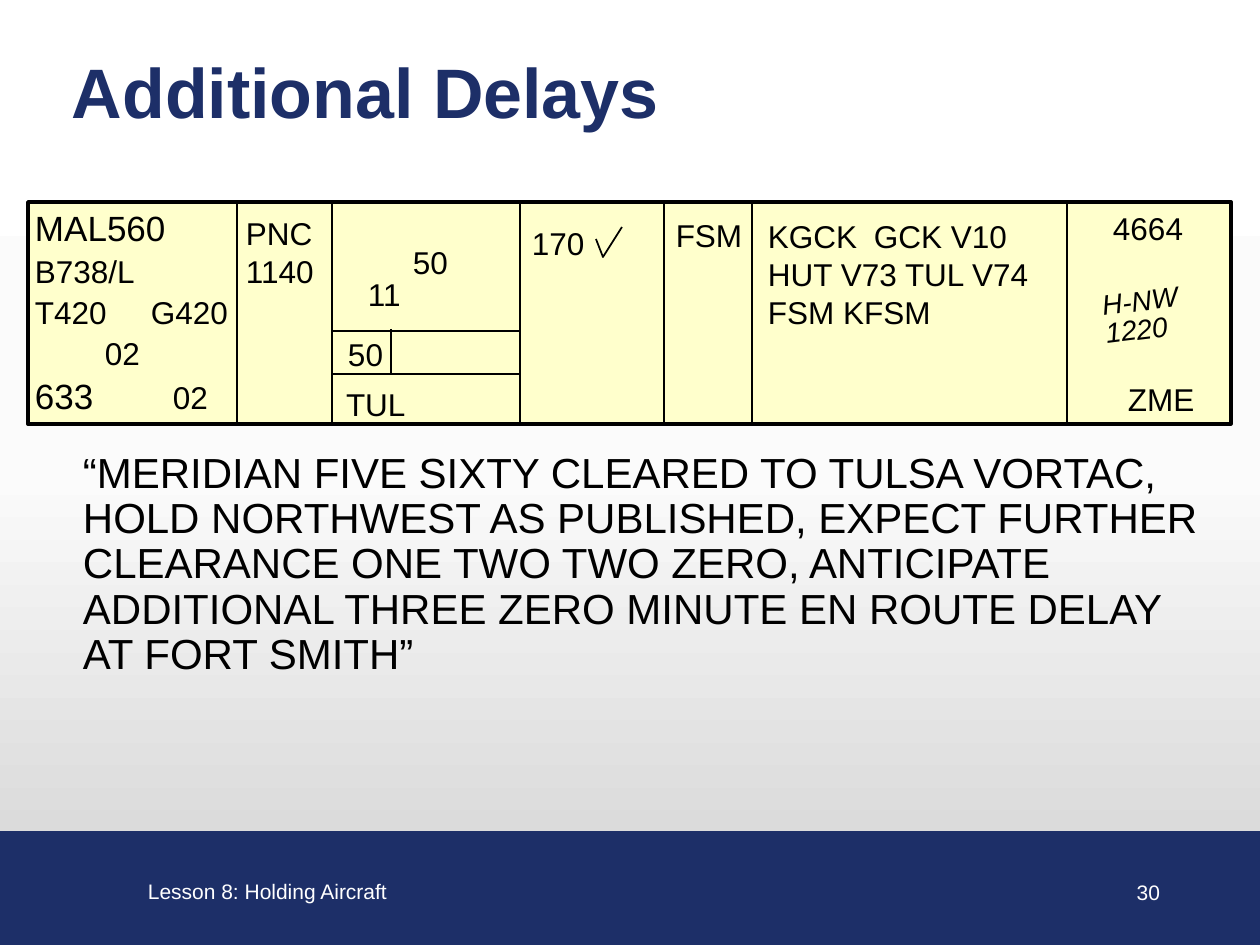
from copy import deepcopy

from lxml import etree
from pptx import Presentation
from pptx.dml.color import RGBColor
from pptx.enum.shapes import MSO_CONNECTOR, MSO_SHAPE
from pptx.enum.text import MSO_ANCHOR, PP_ALIGN
from pptx.oxml.ns import qn
from pptx.util import Emu, Pt

LEFT, CENTER, RIGHT = PP_ALIGN.LEFT, PP_ALIGN.CENTER, PP_ALIGN.RIGHT
TOP, MIDDLE = MSO_ANCHOR.TOP, MSO_ANCHOR.MIDDLE
STRAIGHT, RECTANGLE = MSO_CONNECTOR.STRAIGHT, MSO_SHAPE.RECTANGLE
EMU_PER_PX = 914400 / 126

NAVY, WHITE, BLACK, CREAM = "1D2F68", "FFFFFF", "000000", "FFFFCC"
BACKGROUND = [(0, WHITE), (0.5, "FBFBFB"), (1, "D0D0D0")]
PADDED = (13, 6)

TITLE = "Additional Delays"
CLEARANCE = (
    "“MERIDIAN FIVE SIXTY CLEARED TO TULSA VORTAC, HOLD NORTHWEST AS PUBLISHED, "
    "EXPECT FURTHER CLEARANCE ONE TWO TWO ZERO, ANTICIPATE ADDITIONAL THREE ZERO "
    "MINUTE EN ROUTE DELAY AT FORT SMITH”"
)

FOOTER_BAR = (0, 832, 1260, 113)
STRIP = (28, 202, 1203, 222)
COLUMN_TOP, COLUMN_BOTTOM = 204, 422
COLUMN_EDGES = [237, 332, 520, 664, 752, 1067]
CELL_LINES = [(333, 374, 519, 374), (333, 331, 519, 331), (391, 329, 391, 374)]
CHECK_MARK = [(596, 239), (603, 257), (622, 227)]

AIRCRAFT = [
    [("MAL560", 20)],
    [("B738/L", 18)],
    [("T420\tG420", 18)],
    [("\t02", 18)],
    [("633", 20), ("\t02", 18)],
]
AIRCRAFT_TABS = [[], [], [116], [70], [138]]

TEXTS = [
    ((135, 873, 280, 38), ["Lesson 8: Holding Aircraft"],
     dict(size=12, color=WHITE, inset=PADDED)),
    ((1095, 873, 78, 38), ["30"],
     dict(size=12, color=WHITE, inset=PADDED, align=RIGHT, anchor=MIDDLE)),
    ((35, 207, 202, 213), AIRCRAFT, dict(before=1.7, tabs=AIRCRAFT_TABS)),
    ((346, 385, 80, 39), ["TUL"], {}),
    ((768, 217, 290, 158), ["KGCK\tGCK V10", "HUT V73 TUL V74", "FSM KFSM"],
     dict(tabs=[[106], [], []])),
    ((413, 243, 60, 39), ["50"], {}),
    ((368, 275, 60, 39), ["11"], {}),
    ((233, 208, 101, 88), ["PNC", "1140"], dict(inset=PADDED)),
    ((532, 224, 74, 49), ["170"], {}),
    ((70, 446, 1145, 242), [CLEARANCE], dict(size=24, inset=PADDED, spacing=0.9)),
    ((1104, 287, 94, 60), ["H-NW", "1220"],
     dict(size=16, italic=True, spacing=0.85, rotation=353)),
    ((348, 335, 42, 39), ["50"], {}),
    ((648, 210, 122, 50), ["FSM"], dict(inset=(6, 6), align=CENTER)),
    ((1100, 203, 125, 50), ["4664"], dict(inset=PADDED)),
    ((1115, 374, 112, 50), ["ZME"], dict(inset=PADDED)),
]


def px(length):
    return Emu(round(length * EMU_PER_PX))


def rgb(value):
    return RGBColor.from_string(value)


def write(box, paragraphs, size=18, color=BLACK, bold=False, italic=False,
          align=LEFT, anchor=TOP, inset=(0, 0), spacing=1.0,
          before=0, tabs=None, rotation=0):
    box.rotation = rotation
    frame = box.text_frame
    frame.word_wrap, frame.vertical_anchor = True, anchor
    frame.margin_left = frame.margin_right = px(inset[0])
    frame.margin_top = frame.margin_bottom = px(inset[1])
    for index, content in enumerate(paragraphs):
        para = frame.add_paragraph() if index else frame.paragraphs[0]
        para.alignment, para.line_spacing = align, spacing
        para.space_before = Pt(before if index else 0)
        if tabs and tabs[index]:
            tab_list = etree.SubElement(para._p.get_or_add_pPr(), qn("a:tabLst"))
            for position in tabs[index]:
                etree.SubElement(tab_list, qn("a:tab"), pos=str(px(position)), algn="l")
        spans = [(content, size)] if isinstance(content, str) else content
        for text, points in spans:
            span = para.add_run()
            span.text = text
            span.font.name, span.font.size = "Arial", Pt(points)
            span.font.bold, span.font.italic = bold, italic
            span.font.color.rgb = rgb(color)


def add_text(page, place, paragraphs, **style):
    write(page.shapes.add_textbox(*map(px, place)), paragraphs, **style)


def add_rectangle(page, place, fill, line, width):
    shape = page.shapes.add_shape(RECTANGLE, *map(px, place))
    shape.shadow.inherit = False
    shape.fill.solid()
    shape.fill.fore_color.rgb = rgb(fill)
    shape.line.color.rgb = rgb(line)
    shape.line.width = Pt(width)


def add_line(page, ends):
    line = page.shapes.add_connector(STRAIGHT, *map(px, ends))
    line.line.color.rgb = rgb(BLACK)
    line.line.width = Pt(1)
    etree.SubElement(line._element.spPr, qn("a:effectLst"))


def add_check_mark(page, points):
    builder = page.shapes.build_freeform(*points[0], scale=EMU_PER_PX)
    builder.add_line_segments(points[1:], close=False)
    mark = builder.convert_to_shape()
    mark.shadow.inherit = False
    mark.fill.background()
    mark.line.color.rgb = rgb(BLACK)
    mark.line.width = Pt(1)


def paint_background(page, colors):
    fill = page.background.fill
    fill.gradient()
    fill.gradient_angle = 270
    first = fill.gradient_stops[0]._gs
    first.addnext(deepcopy(first))
    for stop, (position, color) in zip(fill.gradient_stops, colors):
        stop.position = position
        stop.color.rgb = rgb(color)


def main():
    deck = Presentation()
    deck.slide_width, deck.slide_height = px(1260), px(945)
    page = deck.slides.add_slide(deck.slide_layouts[5])
    paint_background(page, BACKGROUND)

    title = page.shapes.title
    title.left, title.top, title.width, title.height = map(px, (59, 48, 1168, 84))
    write(title, [TITLE], size=40, color=NAVY, bold=True, anchor=MIDDLE, inset=PADDED)

    add_rectangle(page, FOOTER_BAR, NAVY, NAVY, 0.75)
    add_rectangle(page, STRIP, CREAM, BLACK, 2)
    columns = [(x, COLUMN_TOP, x, COLUMN_BOTTOM) for x in COLUMN_EDGES]
    for ends in columns + CELL_LINES:
        add_line(page, ends)
    for place, paragraphs, style in TEXTS:
        add_text(page, place, paragraphs, **style)
    add_check_mark(page, CHECK_MARK)
    deck.save("out.pptx")


if __name__ == "__main__":
    main()
